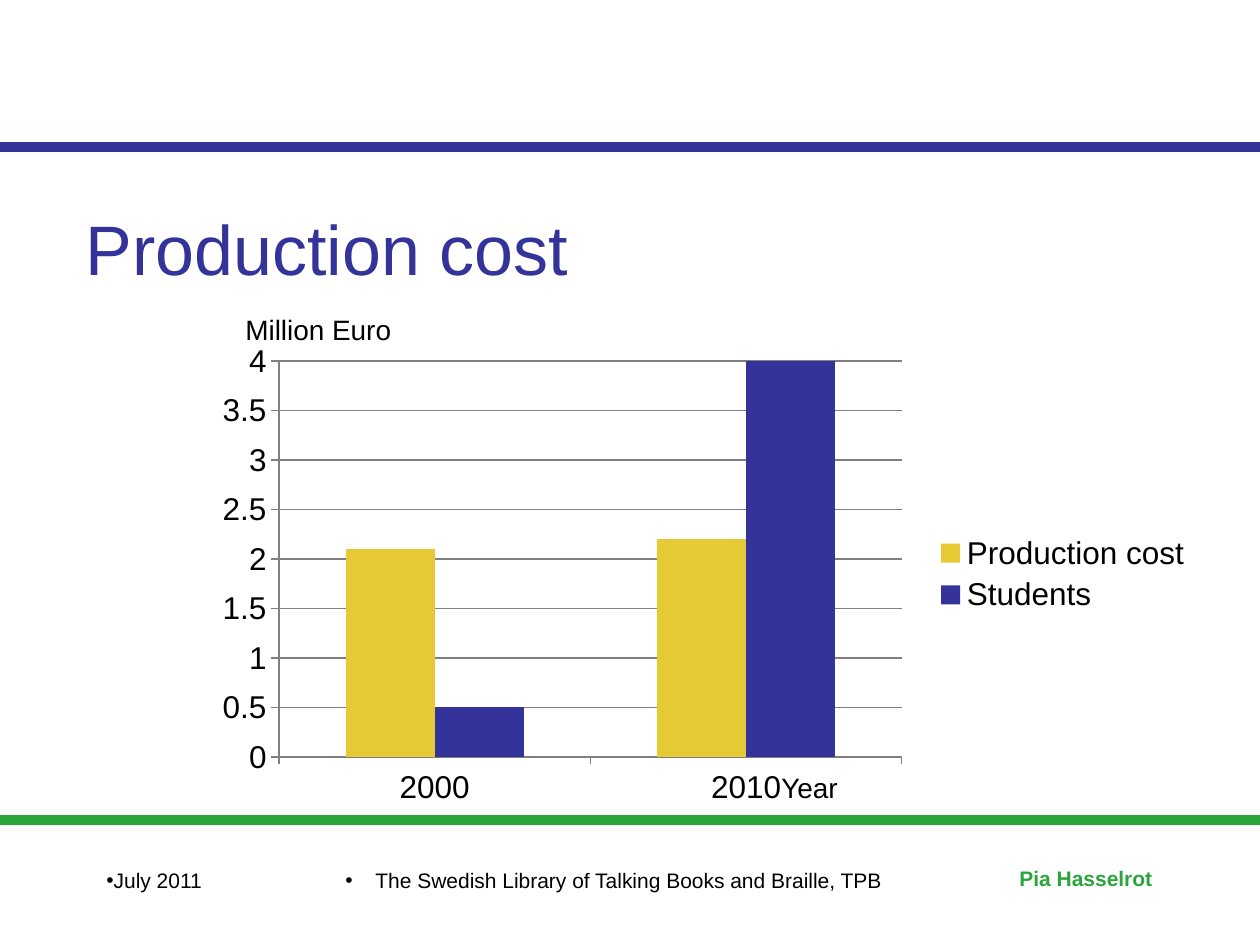
from lxml import etree
from pptx import Presentation
from pptx import util as u
from pptx.chart.data import CategoryChartData
from pptx.dml.color import RGBColor
from pptx.enum import chart as ch, shapes, text
from pptx.oxml import parse_xml
from pptx.oxml.ns import nsdecls, qn

# Content: lengths in px, 126 to the inch
WIDTH, HEIGHT = 1260, 945
FONT = "Arial"
COLORS = {"blue": "333399", "green": "2AA53C", "yellow": "E5CA36",
          "black": "000000", "gray": "808080"}
TITLE = ("Production cost", (73, 195, 1081, 105))
RULES = [(147, "blue"), (820, "green")]
CATEGORIES = ["2000", "2010"]
SERIES = [("Production cost", [2.1, 2.2], "yellow"),
          ("Students", [0.5, 4], "blue")]
CHART_BOX = (203, 334, 1002, 480)
PLOT_BOX = (279, 361, 623, 396)
# text, box, size, colour, bold, bullet indent (None for no bullet)
LABELS = [
    ("Million Euro", (233, 306, 287, 47), 16, "black", False, None),
    ("Year", (769, 764, 89, 47), 16, "black", False, None),
    ("July 2011", (94, 861, 262, 63), 12, "black", False, 0),
    ("The Swedish Library of Talking Books and Braille, TPB",
     (333, 861, 596, 63), 12, "black", False, 30),
    ("Pia Hasselrot", (1007, 859, 218, 38), 12, "green", True, None),
]


def px(n):
    return u.Emu(round(n * 914400 / 126))


def rgb(name):
    return RGBColor.from_string(COLORS[name])


def style(font, size, color, bold=False):
    font.name, font.size, font.bold = FONT, u.Pt(size), bold
    font.color.rgb = rgb(color)


def add_run(p, words, size, color, bold=False):
    r = p.add_run()
    r.text = words
    style(r.font, size, color, bold)


def add_label(s, words, box, size, color, bold, indent):
    tf = s.shapes.add_textbox(*map(px, box)).text_frame
    tf.word_wrap = True
    p = tf.paragraphs[0]
    if indent is not None:
        pPr = p._p.get_or_add_pPr()
        pPr.set("marL", str(px(indent)))
        pPr.set("indent", str(-px(indent)))
        etree.SubElement(pPr, qn("a:buFont")).set("typeface", FONT)
        etree.SubElement(pPr, qn("a:buChar")).set("char", "•")
    add_run(p, words, size, color, bold)


def add_rule(s, y, color):
    line = s.shapes.add_connector(shapes.MSO_CONNECTOR.STRAIGHT,
                                  0, px(y), px(WIDTH), px(y))
    line.line.color.rgb = rgb(color)
    line.line.width = u.Pt(6)
    etree.SubElement(line._element.spPr, qn("a:effectLst"))


def place_plot(chart):
    """Fix the inner plot area as fractions of the chart box."""
    cx, cy, cw, chh = CHART_BOX
    x, y, w, h = PLOT_BOX
    parts = {"x": (x - cx) / cw, "y": (y - cy) / chh, "w": w / cw, "h": h / chh}
    modes = "".join(f'<c:{k}Mode val="edge"/>' for k in "xy")
    values = "".join(f'<c:{k} val="{v:.4f}"/>' for k, v in parts.items())
    layout = parse_xml(
        f'<c:layout {nsdecls("c")}><c:manualLayout><c:layoutTarget val="inner"/>'
        f'{modes}{values}</c:manualLayout></c:layout>')
    area = chart._chartSpace.chart.plotArea
    for old in area.findall(qn("c:layout")):
        area.remove(old)
    area.insert(0, layout)


def add_cost_chart(s):
    data = CategoryChartData()
    data.categories = CATEGORIES
    for name, values, _ in SERIES:
        data.add_series(name, values)
    chart = s.shapes.add_chart(ch.XL_CHART_TYPE.COLUMN_CLUSTERED,
                               *map(px, CHART_BOX), data).chart
    style(chart.font, 18, "black")
    chart.has_title = False
    chart.has_legend = True
    chart.legend.position = ch.XL_LEGEND_POSITION.RIGHT
    chart.legend.include_in_layout = False

    plot = chart.plots[0]
    plot.vary_by_categories = False
    plot.gap_width, plot.overlap = 150, 0
    for series, (_, _, color) in zip(plot.series, SERIES):
        series.format.fill.solid()
        series.format.fill.fore_color.rgb = rgb(color)

    value = chart.value_axis
    value.minimum_scale, value.maximum_scale, value.major_unit = 0, 4, 0.5
    value.has_major_gridlines = True
    value.tick_labels.number_format = "General"
    value.tick_labels.number_format_is_linked = False
    for axis in (value, chart.category_axis):
        axis.major_tick_mark = ch.XL_TICK_MARK.OUTSIDE
    for part in (value, chart.category_axis, value.major_gridlines):
        part.format.line.color.rgb = rgb("gray")
        part.format.line.width = u.Pt(0.75)
    place_plot(chart)


def main():
    prs = Presentation()
    prs.slide_width, prs.slide_height = px(WIDTH), px(HEIGHT)
    s = prs.slides.add_slide(prs.slide_layouts[5])

    # Title
    words, box = TITLE
    sp = s.shapes.title
    sp.left, sp.top, sp.width, sp.height = map(px, box)
    tf = sp.text_frame
    tf.vertical_anchor = text.MSO_ANCHOR.MIDDLE
    p = tf.paragraphs[0]
    p.alignment = text.PP_ALIGN.LEFT
    add_run(p, words, 40, "blue")

    # Rules, chart, then labels on top
    for y, color in RULES:
        add_rule(s, y, color)
    add_cost_chart(s)
    for label in LABELS:
        add_label(s, *label)

    prs.save("out.pptx")


if __name__ == "__main__":
    main()
